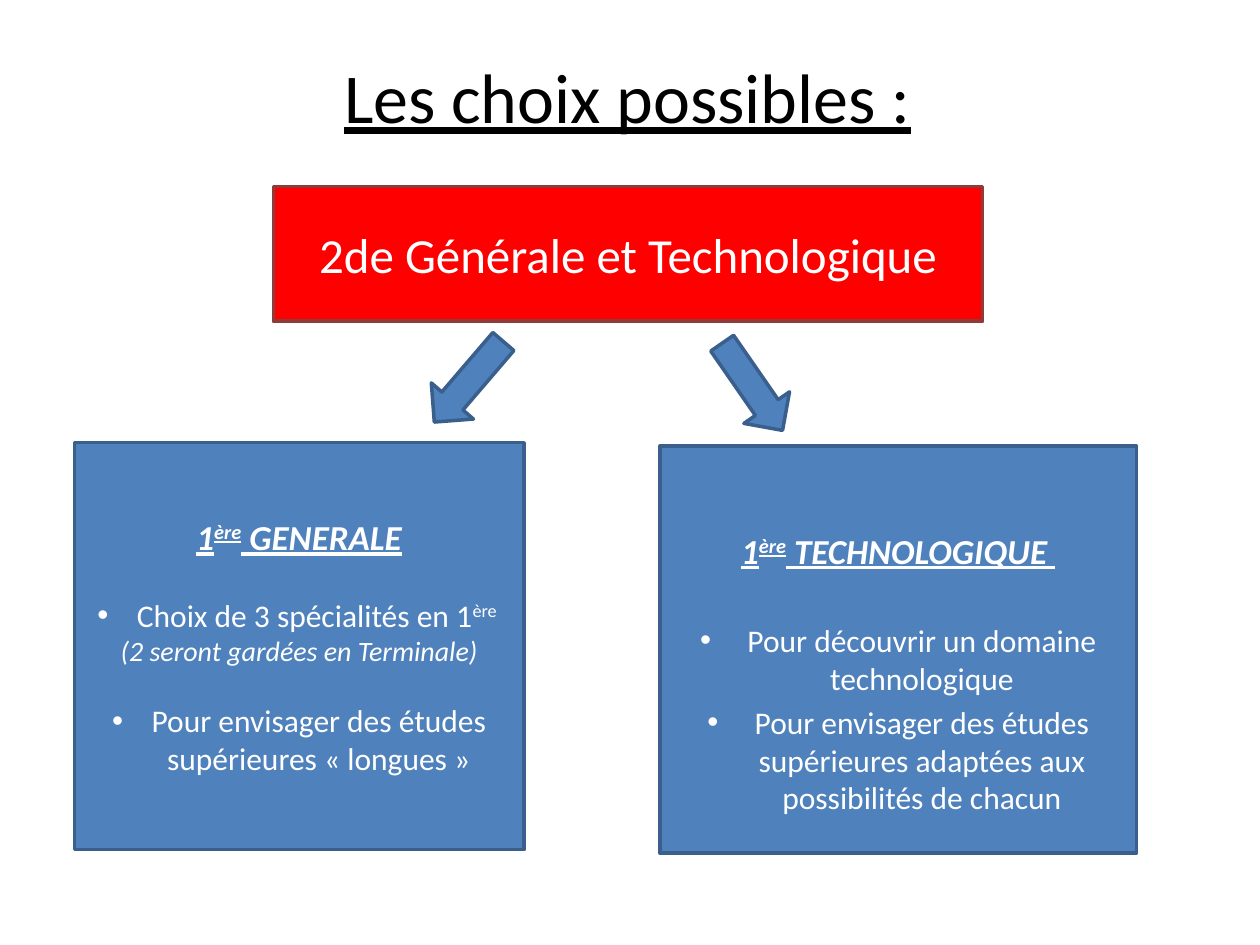
from lxml.etree import SubElement
from pptx import Presentation
from pptx.dml.color import RGBColor
from pptx.enum.shapes import MSO_SHAPE as Preset
from pptx.enum.text import MSO_ANCHOR as Anchor, PP_ALIGN as Align
from pptx.oxml.ns import qn
from pptx.util import Pt

FONT = "Calibri"
COLORS = {"black": "000000", "white": "FFFFFF", "red": "FF0000",
          "red_line": "8E3B39", "blue": "4F81BD", "blue_line": "3A5F8C"}

TITLE = "Les choix possibles :"
TITLE_AREA = (34.5, 9.4, 648, 90)

HEADING = {"size": 20, "bold": True, "italic": True, "underline": True}
ITEM = {"size": 18}
REMARK = {"size": 16, "italic": True}

# Text between carets is superscript: (text, style, space before, bullet indent)
BOXES = [
    {"area": (156.2, 106.6, 405.4, 77), "fill": "red", "line": "red_line", "top_inset": 3.6,
     "paragraphs": [("2de Générale et Technologique", {"size": 28}, 0, 0)]},
    {"area": (42.5, 253, 257, 232.6), "fill": "blue", "line": "blue_line", "top_inset": 3.6,
     "paragraphs": [
         ("1^ère^ GENERALE", HEADING, 0, 0),
         ("Choix de 3 spécialités en 1^ère ^", ITEM, 22, 22.5),
         ("(2 seront gardées en Terminale)", REMARK, 0, 0),
         ("Pour envisager des études supérieures «\u00a0longues\u00a0»", ITEM, 19.5, 22.5)]},
    {"area": (377.2, 254.9, 272.2, 232.6), "fill": "blue", "line": "blue_line", "top_inset": 30,
     "paragraphs": [
         ("1^ère^ TECHNOLOGIQUE ", HEADING, 0, 0),
         ("Pour découvrir un domaine technologique", ITEM, 28.5, 27),
         ("Pour envisager des études supérieures adaptées aux possibilités de chacun",
          ITEM, 3.6, 27)]},
]

ARROW_SIZE = (60.6, 31.7)
ARROWS = [(237.6, 202.3, 130.6), (399.6, 205.2, 55.3)]  # left, top, rotation


def color(name):
    return RGBColor.from_string(COLORS[name])


def add_filled_shape(slide, preset, area, fill, line):
    shape = slide.shapes.add_shape(preset, *map(Pt, area))
    shape.shadow.inherit = False
    shape.fill.solid()
    shape.fill.fore_color.rgb = color(fill)
    shape.line.color.rgb = color(line)
    shape.line.width = Pt(2)
    return shape


def style_run(run, color_name, size, bold=False, italic=False, underline=False):
    font = run.font
    font.name, font.size = FONT, Pt(size)
    font.bold, font.italic, font.underline = bold, italic, underline
    font.color.rgb = color(color_name)


def add_bullet(paragraph, indent):
    properties = paragraph._p.get_or_add_pPr()
    properties.set("marL", str(Pt(indent)))
    properties.set("indent", str(-Pt(indent)))
    SubElement(properties, qn("a:buFont")).set("typeface", "Arial")
    SubElement(properties, qn("a:buChar")).set("char", "•")


def write_paragraph(paragraph, text, style, space_before, indent):
    paragraph.alignment = Align.CENTER
    paragraph.space_before = Pt(space_before)
    if indent:
        add_bullet(paragraph, indent)
    for index, part in enumerate(text.split("^")):
        if part:
            run = paragraph.add_run()
            run.text = part
            style_run(run, "white", **style)
            if index % 2:
                run._r.get_or_add_rPr().set("baseline", "30000")


def add_box(slide, box):
    shape = add_filled_shape(slide, Preset.RECTANGLE, box["area"], box["fill"], box["line"])
    frame = shape.text_frame
    frame.word_wrap = True
    frame.vertical_anchor = Anchor.MIDDLE
    frame.margin_top = Pt(box["top_inset"])
    for index, content in enumerate(box["paragraphs"]):
        paragraph = frame.add_paragraph() if index else frame.paragraphs[0]
        write_paragraph(paragraph, *content)


def add_title(slide):
    title = slide.shapes.title
    title.left, title.top, title.width, title.height = map(Pt, TITLE_AREA)
    title.text_frame.text = TITLE
    title.text_frame.vertical_anchor = Anchor.MIDDLE
    paragraph = title.text_frame.paragraphs[0]
    paragraph.alignment = Align.CENTER
    style_run(paragraph.runs[0], "black", 40, underline=True)


def main():
    presentation = Presentation()
    presentation.slide_width, presentation.slide_height = Pt(720), Pt(540)
    slide = presentation.slides.add_slide(presentation.slide_layouts[5])
    add_title(slide)
    for box in BOXES:
        add_box(slide, box)
    for left, top, rotation in ARROWS:
        arrow = add_filled_shape(slide, Preset.RIGHT_ARROW, (left, top, *ARROW_SIZE),
                                 "blue", "blue_line")
        arrow.rotation = rotation
    presentation.save("out.pptx")


if __name__ == "__main__":
    main()
